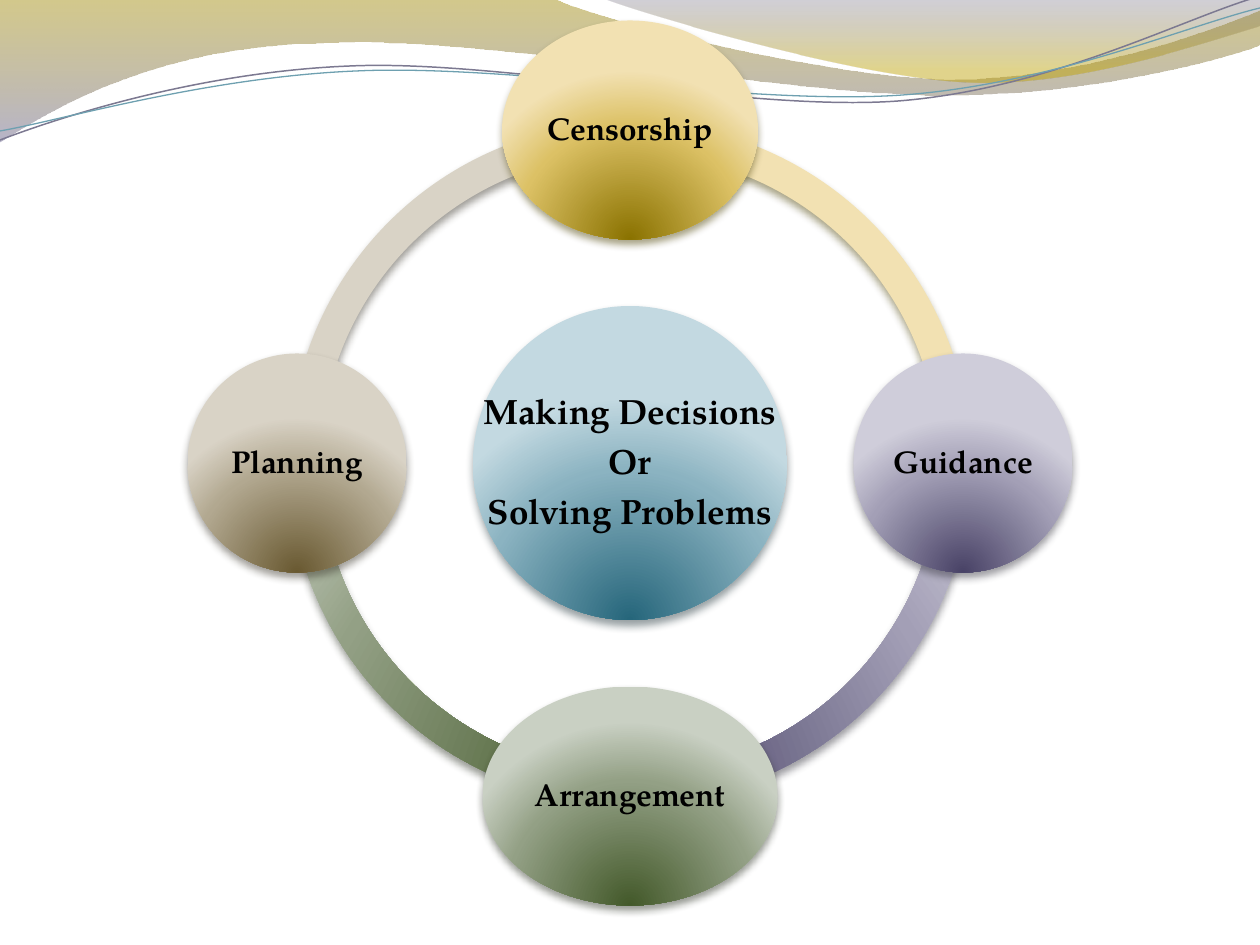
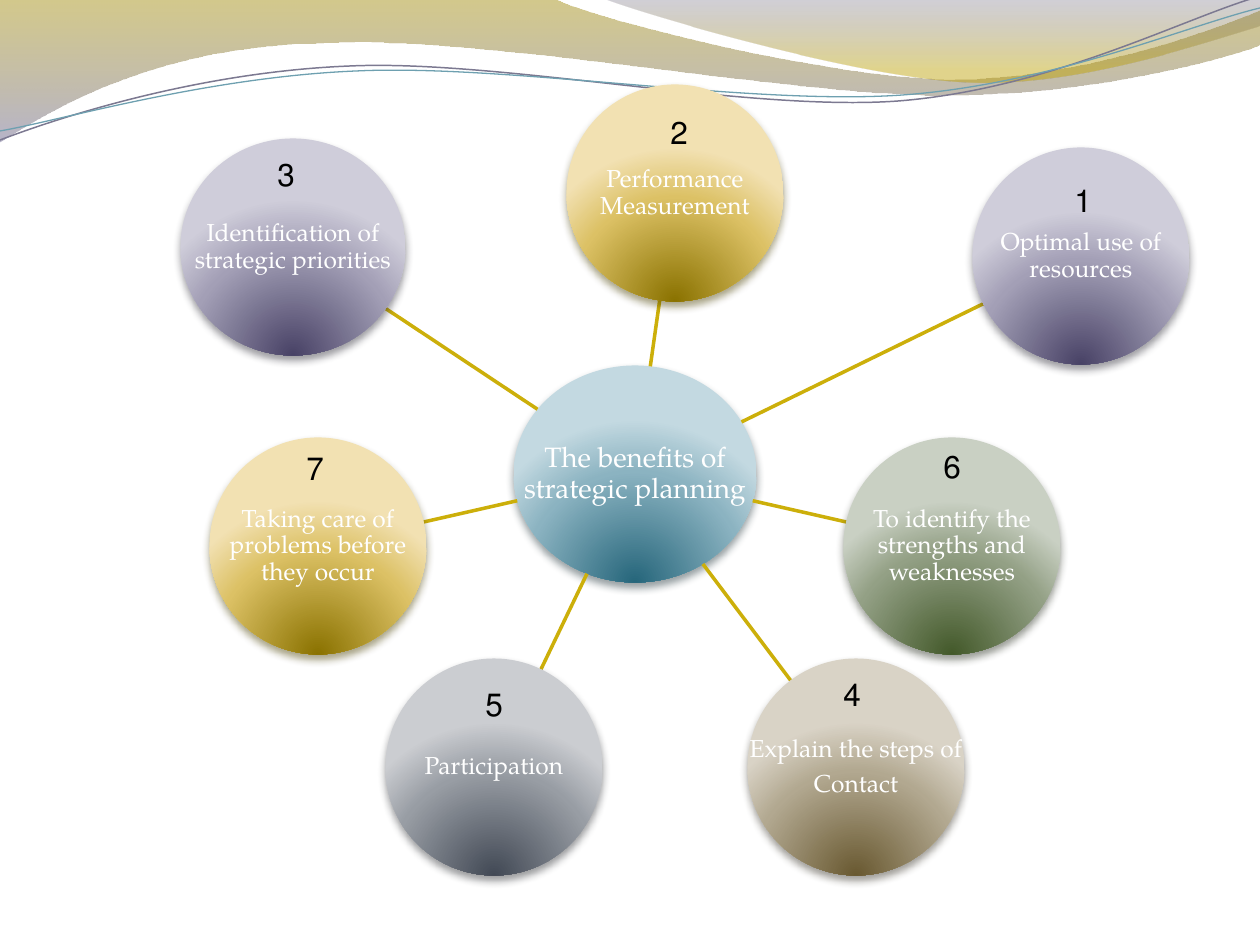
from math import cos, hypot, radians, sin

from pptx import Presentation
from pptx.dml.color import RGBColor
from pptx.enum.shapes import MSO_CONNECTOR, MSO_SHAPE
from pptx.enum.text import MSO_ANCHOR, MSO_AUTO_SIZE, PP_ALIGN
from pptx.oxml import parse_xml
from pptx.oxml.ns import nsdecls, qn
from pptx.util import Pt

PX = 914400 / 126
FONT = "TeX Gyre Pagella"
COLORS = {
    "text": "000000", "light text": "FFFFFF", "link": "CCAF0A",
    "violet line": "7C7991", "teal line": "6EA0B0",
    "wave top": "9E8700", "wave bottom": "7B769C",
    "crest top": "66627C", "crest bottom": "BDA100",
}
# Dark, middle, light and shadow tone of each accent
ACCENTS = {
    "teal": ("26667B", "8BB3C1", "C3D9E1", "26383E"),
    "gold": ("8A7200", "DCC165", "F2E1B2", "493F02"),
    "violet": ("484266", "A39FB6", "CFCDDA", "31303A"),
    "green": ("43592A", "93A085", "C9D0C3", "292F21"),
    "brown": ("695931", "B2A890", "D9D3C6", "383328"),
    "slate": ("424955", "989DA4", "CBCDD1", "2C2E32"),
}

# Two numbers are a line to a point, six a Bezier curve
WAVE = [(0, 0), (554, -1), (600, 21, 837, 79, 955, 79), (1074, 79, 1207, 33, 1260, 11),
        (1261, 45), (1237, 55, 1096, 96, 940, 95), (784, 95, 481, 35, 324, 43),
        (163, 45, 58, 105, -1, 142)]
CREST = [(604, -1), (641, 14, 859, 78, 969, 82), (1079, 87, 1211, 40, 1260, 26), (1260, 0)]
VIOLET_LINE = [(0, 140), (60, 117, 199, 72, 349, 66), (498, 59, 747, 112, 898, 101),
               (1050, 89, 1182, 19, 1257, -3)]
TEAL_LINE = [(0, 131), (59, 121, 207, 77, 357, 71), (508, 64, 752, 106, 903, 95),
             (1053, 84, 1186, 26, 1260, 8)]

# Label, accent, width: clockwise from the top
CYCLE = [("Censorship", "gold", 256), ("Guidance", "violet", 219),
         ("Arrangement", "green", 295), ("Planning", "brown", 219)]

# Number, label, accent, centre, width, offset of the number from the centre
BENEFITS = [
    ("2", ["Performance Measurement"], "gold", (675, 193), 217, (4, -61)),
    ("1", ["Optimal use of resources"], "violet", (1081, 256), 217, (2, -56)),
    ("6", ["To identify the strengths and weaknesses"], "green", (952, 546), 217, (0, -80)),
    ("4", ["Explain the steps of", "Contact"], "brown", (856, 767), 217, (-4, -73)),
    ("5", ["Participation"], "slate", (494, 767), 217, (0, -63)),
    ("7", ["Taking care of problems before they occur"], "gold", (318, 546), 217, (-3, -78)),
    ("3", ["Identification of strategic priorities"], "violet", (293, 247), 225, (-7, -73)),
]


def emu(*lengths):
    return [round(v * PX) for v in lengths]


def around(center, w, h):
    """Box of the given size about a centre."""
    return center[0] - w / 2, center[1] - h / 2, w, h


def set_gradient(sp, stops, direction):
    """Fill with (position %, colour, opacity %) stops."""
    gs = "".join(f'<a:gs pos="{pos * 1000}"><a:srgbClr val="{color}">'
                 f'<a:alpha val="{alpha * 1000}"/></a:srgbClr></a:gs>'
                 for pos, color, alpha in stops)
    sp.fill.background()
    props = sp.element.spPr
    props.replace(props.find(qn("a:noFill")), parse_xml(
        f'<a:gradFill {nsdecls("a")} rotWithShape="1"><a:gsLst>{gs}</a:gsLst>'
        f'{direction}</a:gradFill>'))


def add_glossy(slide, kind, box, accent):
    """Preset shape lit from above, with a soft shadow."""
    sp = slide.shapes.add_shape(kind, *emu(*box))
    *tones, shade = ACCENTS[accent]
    set_gradient(sp, [(pos, c, 100) for pos, c in zip((0, 68, 100), tones)],
                 '<a:path path="circle"><a:fillToRect l="50000" t="130000" '
                 'r="50000" b="-30000"/></a:path>')
    sp.line.fill.background()
    sp.shadow.inherit = False
    sp.element.spPr.find(qn("a:effectLst")).append(parse_xml(
        f'<a:outerShdw {nsdecls("a")} blurRad="{Pt(4.5)}" dist="{Pt(3)}" dir="5400000" '
        f'rotWithShape="0"><a:srgbClr val="{shade}"><a:alpha val="48000"/></a:srgbClr>'
        '</a:outerShdw>'))
    return sp


def add_text(slide, box, lines, size, color="text", bold=None, inset=None, **para):
    tf = slide.shapes.add_textbox(*emu(*box)).text_frame
    tf.word_wrap = True
    if inset is not None:
        tf.vertical_anchor = MSO_ANCHOR.MIDDLE
        for side in ("left", "top", "right", "bottom"):
            setattr(tf, f"margin_{side}", emu(inset)[0])
    for i, line in enumerate(lines):
        p = tf.paragraphs[0] if i == 0 else tf.add_paragraph()
        p._p.get_or_add_pPr().set("rtl", "1")
        for name, value in {"alignment": PP_ALIGN.CENTER, **para}.items():
            setattr(p, name, value)
        r = p.add_run()
        r.text = line
        for name, value in {"name": FONT, "size": Pt(size), "bold": bold}.items():
            setattr(r.font, name, value)
        r.font.color.rgb = RGBColor.from_string(COLORS[color])
    return tf


def add_bubble(slide, box, lines, accent, size, **text):
    """Glossy ellipse with a label as wide as the whole ellipse."""
    add_glossy(slide, MSO_SHAPE.OVAL, box, accent)
    add_text(slide, box, lines, size, line_spacing=0.9, space_after=Pt(0.35 * size), **text)


def add_outline(slide, steps, close):
    """Freeform through lines and Bezier curves."""
    start, *rest = steps
    points = [step[i:i + 2] for step in rest for i in range(0, len(step), 2)]
    builder = slide.shapes.build_freeform(*start, scale=PX)
    builder.add_line_segments(points, close=close)
    sp = builder.convert_to_shape()
    sp.shadow.inherit = False
    segments = iter(list(sp.element.iter(qn("a:lnTo"))))
    for step in rest:
        first = next(segments)
        if len(step) == 6:
            curve = parse_xml(f'<a:cubicBezTo {nsdecls("a")}/>')
            first.addprevious(curve)
            for segment in (first, next(segments), next(segments)):
                curve.append(segment[0])
                segment.getparent().remove(segment)
    return sp


def add_waves(slide):
    """Band of waves along the top of a slide."""
    for steps, name, end, alphas in ((WAVE, "wave", 100, (45, 55)),
                                     (CREST, "crest", 80, (30, 45))):
        sp = add_outline(slide, steps, True)
        set_gradient(sp, [(0, COLORS[f"{name} top"], alphas[0]),
                          (end, COLORS[f"{name} bottom"], alphas[1])],
                     '<a:lin ang="5400000" scaled="0"/>')
        sp.line.fill.background()
    for steps, color, width in ((VIOLET_LINE, "violet line", 0.85),
                                (TEAL_LINE, "teal line", 0.75)):
        sp = add_outline(slide, steps, False)
        sp.fill.background()
        sp.line.color.rgb = RGBColor.from_string(COLORS[color])
        sp.line.width = Pt(width)


def add_cycle(slide, center, radius):
    """Ring of four bubbles about a central one."""
    label = {"bold": True, "inset": 4}
    quarter = 54  # adjustment units in 90 degrees
    for i, (_, accent, _) in reversed(list(enumerate(CYCLE))):
        arc = add_glossy(slide, MSO_SHAPE.BLOCK_ARC, around(center, 682, 682), accent)
        for j, value in enumerate(((i + 3) % 4 * quarter, i * quarter, 0.046)):
            arc.adjustments[j] = value
    add_bubble(slide, around(center, 314, 314),
               ["Making Decisions", "Or", "Solving Problems"], "teal", 20, **label)
    for i, (name, accent, width) in enumerate(CYCLE):
        angle = radians(90 * i - 90)
        node = center[0] + radius * cos(angle), center[1] + radius * sin(angle)
        add_bubble(slide, around(node, width, 219), [name], accent, 18, **label)


def edge_point(center, w, h, target):
    """Where the line from an ellipse's centre to the target leaves the ellipse."""
    dx, dy = target[0] - center[0], target[1] - center[1]
    t = 1 / hypot(2 * dx / w, 2 * dy / h)
    return center[0] + t * dx, center[1] + t * dy


def add_link(slide, start, end):
    link = slide.shapes.add_connector(MSO_CONNECTOR.STRAIGHT, *emu(*start, *end))
    link.line.color.rgb = RGBColor.from_string(COLORS["link"])
    link.line.width = Pt(2)
    link.element.spPr.append(parse_xml(f'<a:effectLst {nsdecls("a")}/>'))


def add_benefits(slide, hub):
    """Numbered bubbles linked to a central one."""
    label = {"color": "light text", "inset": 1}
    hub_w, height = 243, 217
    add_bubble(slide, around(hub, hub_w, height),
               ["The benefits of strategic planning"], "teal", 16, **label)
    for _, lines, accent, node, width, _ in BENEFITS:
        add_link(slide, edge_point(hub, hub_w, height, node),
                 edge_point(node, width, height, hub))
        add_bubble(slide, around(node, width, height), lines, accent, 14, **label)
    for number, _, _, (x, y), _, (dx, dy) in sorted(BENEFITS):
        tf = add_text(slide, around((x + dx, y + dy), 59, 50), [number], 18)
        tf.auto_size = MSO_AUTO_SIZE.SHAPE_TO_FIT_TEXT


def main():
    prs = Presentation()
    prs.slide_width, prs.slide_height = emu(1260, 945)
    for add_diagram, args in ((add_cycle, ((630, 463), 333)),
                              (add_benefits, ((635, 474),))):
        slide = prs.slides.add_slide(prs.slide_layouts[6])
        add_waves(slide)
        add_diagram(slide, *args)
    prs.save("out.pptx")


if __name__ == "__main__":
    main()
